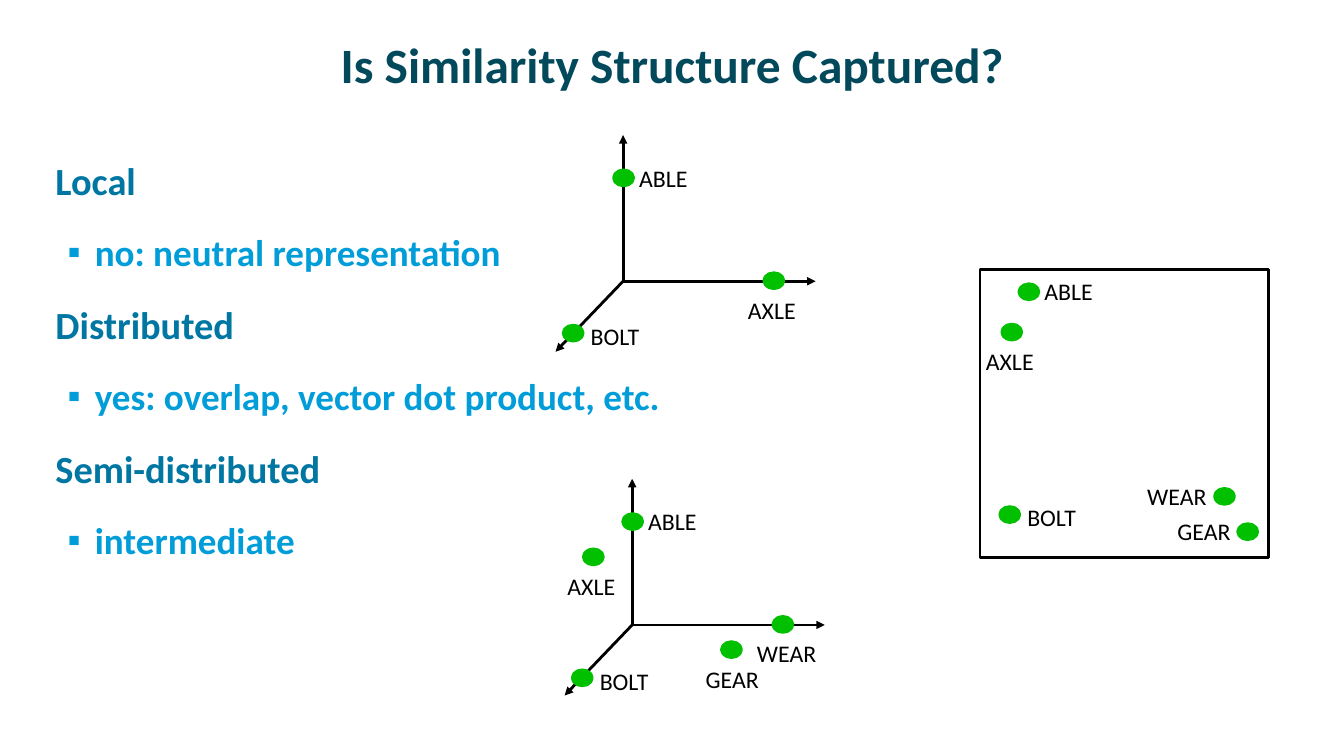
from lxml.etree import SubElement
from pptx import Presentation
from pptx.dml.color import RGBColor
from pptx.enum.shapes import MSO_CONNECTOR, MSO_SHAPE
from pptx.enum.text import MSO_ANCHOR, PP_ALIGN
from pptx.oxml.ns import qn
from pptx.util import Inches, Pt

FONT = "Calibri"
BLACK = RGBColor(0x00, 0x00, 0x00)
GREEN = RGBColor(0x00, 0xC0, 0x00)
NAVY = RGBColor(0x03, 0x49, 0x5C)
TEAL = RGBColor(0x00, 0x76, 0xA3)
SKY = RGBColor(0x00, 0x9D, 0xD9)

# Content
TITLE = "Is Similarity Structure Captured?"
SCHEMES = [
    ("Local", "no: neutral representation"),
    ("Distributed", "yes: overlap, vector dot product, etc."),
    ("Semi-distributed", "intermediate"),
]

# Each plot: origin, then words as (word, dot left, dot top, label side),
# measured from that origin
LOCAL_PLOT = (6.18, 2.79), [
    ("ABLE", -0.08, -1.09, "right"),
    ("AXLE", 1.41, -0.07, "below"),
    ("BOLT", -0.58, 0.45, "lower right"),
]
SEMI_PLOT = (6.27, 6.2), [
    ("ABLE", -0.08, -1.09, "right"),
    ("WEAR", 1.41, -0.07, "below"),
    ("BOLT", -0.58, 0.46, "lower right"),
    ("GEAR", 0.9, 0.18, "below"),
    ("AXLE", -0.47, -0.74, "below"),
]
DISTRIBUTED_PLOT = (9.72, 2.67), [
    ("ABLE", 0.4, 0.16, "right"),
    ("AXLE", 0.23, 0.56, "below"),
    ("BOLT", 0.21, 2.37, "lower right"),
    ("WEAR", 2.34, 2.19, "left"),
    ("GEAR", 2.57, 2.54, "left"),
]

# Geometry
AXIS_TIPS = [(1.91, 0), (0, -1.45), (-0.67, 0.7)]
SQUARE_SIDE = 2.86
DOT_SIZE = 0.17, 0.13
LABEL_WIDTHS = {"ABLE": 0.7, "AXLE": 0.7, "BOLT": 0.69, "GEAR": 0.73, "WEAR": 0.8}
LABEL_HEIGHT = 0.39
LABEL_OFFSETS = {"right": (0.14, -0.13), "lower right": (0.16, -0.1),
                 "below": (-0.27, 0.16)}

prs = Presentation()
prs.slide_width, prs.slide_height = Inches(13.33), Inches(7.5)
slide = prs.slides.add_slide(prs.slide_layouts[6])


def add_frame(left, top, width, height):
    box = slide.shapes.add_textbox(*map(Inches, (left, top, width, height)))
    return box.text_frame


def add_run(paragraph, text, size, color, bold=False):
    run = paragraph.add_run()
    run.text = text
    run.font.name, run.font.size, run.font.bold = FONT, Pt(size), bold
    run.font.color.rgb = color


def set_indent(paragraph, margin, indent, bullet=None):
    props = paragraph._p.get_or_add_pPr()
    props.set("marL", str(Inches(margin)))
    props.set("indent", str(Inches(indent)))
    if bullet:
        SubElement(props, qn("a:buFont"), typeface="Arial")
        SubElement(props, qn("a:buChar"), char=bullet)


def add_axes(x, y):
    for dx, dy in AXIS_TIPS:
        axis = slide.shapes.add_connector(
            MSO_CONNECTOR.STRAIGHT, *map(Inches, (x, y, x + dx, y + dy)))
        axis.line.color.rgb, axis.line.width = BLACK, Pt(2)
        SubElement(axis.line._get_or_add_ln(), qn("a:tailEnd"), type="triangle")
        SubElement(axis._element.spPr, qn("a:effectLst"))


def add_square(x, y):
    square = slide.shapes.add_shape(
        MSO_SHAPE.RECTANGLE, *map(Inches, (x, y, SQUARE_SIDE, SQUARE_SIDE)))
    square.shadow.inherit = False
    square.fill.background()
    square.line.color.rgb, square.line.width = BLACK, Pt(2)


def add_word(word, left, top, side):
    dot = slide.shapes.add_shape(
        MSO_SHAPE.OVAL, *map(Inches, (left, top, *DOT_SIZE)))
    dot.shadow.inherit = False
    dot.fill.solid()
    dot.fill.fore_color.rgb = GREEN
    dot.line.color.rgb, dot.line.width = GREEN, Pt(4)

    width = LABEL_WIDTHS[word]
    dx, dy = LABEL_OFFSETS.get(side, (0.02 - width, -0.13))
    label = add_frame(left + dx, top + dy, width, LABEL_HEIGHT)
    label.word_wrap = False
    add_run(label.paragraphs[0], word, 17, BLACK)


# Title
title = add_frame(0.67, 0.17, 12, 0.92)
title.word_wrap = True
title.vertical_anchor = MSO_ANCHOR.MIDDLE
title.paragraphs[0].alignment = PP_ALIGN.CENTER
add_run(title.paragraphs[0], TITLE, 35.3, NAVY, bold=True)

# Schemes and their answers
body = add_frame(0.44, 1.5, 12.22, 5.2)
body.word_wrap = True
body.margin_left = body.margin_right = Inches(0.11)
body.margin_top = body.margin_bottom = Inches(0.06)
for number, (scheme, answer) in enumerate(SCHEMES):
    heading = body.add_paragraph() if number else body.paragraphs[0]
    heading.space_before = Pt(19 if number else 0)
    set_indent(heading, 0.1, -0.1)
    add_run(heading, scheme, 27.4, TEAL, bold=True)

    reply = body.add_paragraph()
    reply.level = 1
    reply.space_before = Pt(19)
    set_indent(reply, 0.39, -0.27, "▪")
    add_run(reply, answer, 26.5, SKY, bold=True)

# Plots
for add_outline, ((x, y), words) in [
    (add_axes, LOCAL_PLOT),
    (add_square, DISTRIBUTED_PLOT),
    (add_axes, SEMI_PLOT),
]:
    add_outline(x, y)
    for word, dx, dy, side in words:
        add_word(word, x + dx, y + dy, side)

prs.save("out.pptx")
